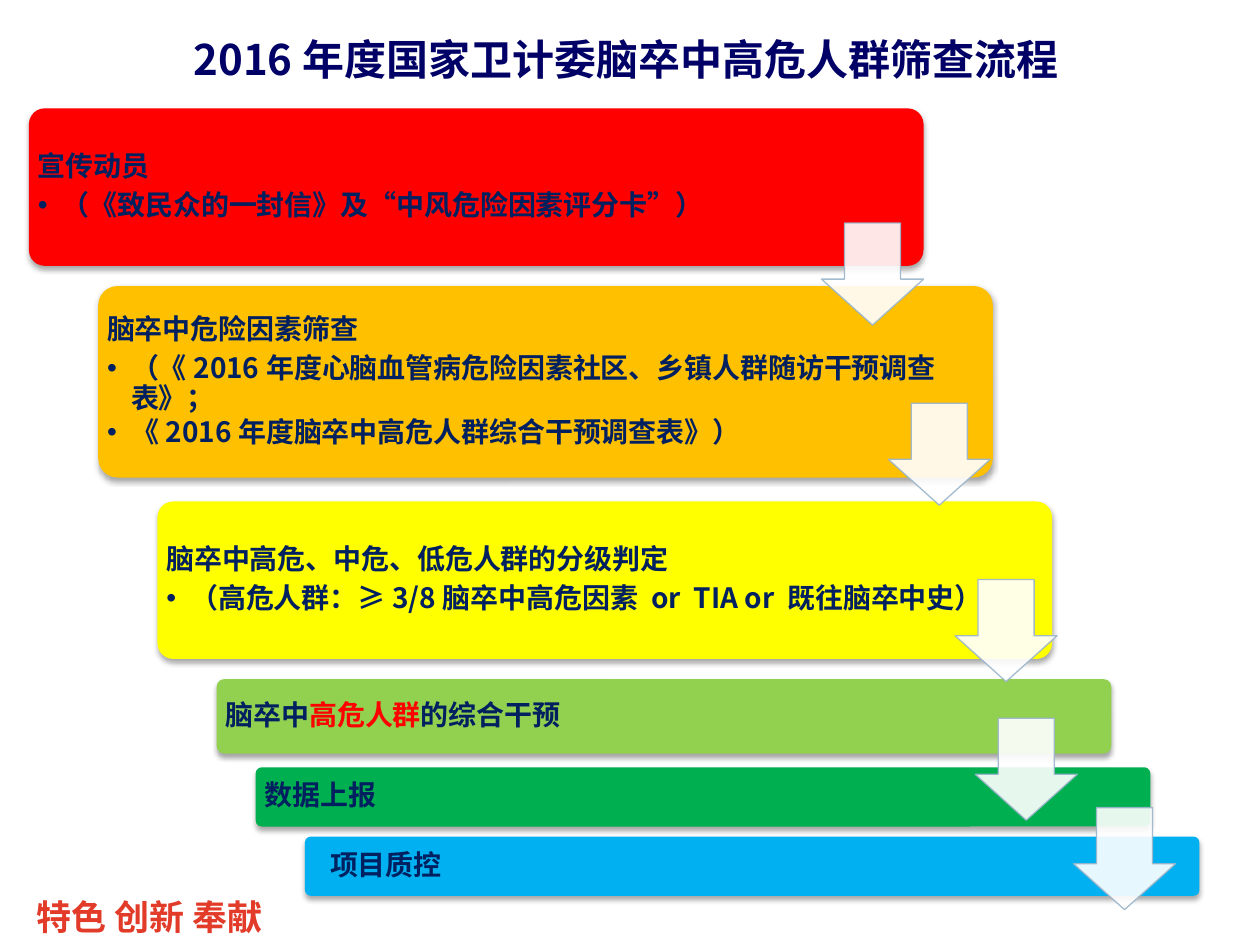
from dataclasses import dataclass

from lxml.etree import SubElement
from pptx import Presentation
from pptx.dml.color import RGBColor
from pptx.enum.shapes import MSO_SHAPE as Shape
from pptx.enum.text import MSO_ANCHOR as Anchor, PP_ALIGN as Align
from pptx.oxml.ns import qn
from pptx.util import Emu, Inches, Pt


@dataclass(frozen=True)
class Theme:
    font: str = "Noto Sans CJK SC"
    title: str = "000066"
    body: str = "002060"
    alert: str = "FF0000"
    motto: str = "E33B29"
    arrow: str = "FFFFFF"
    arrow_line: str = "9AB4CA"
    shadow: str = "000000"
    title_size: int = 24
    body_size: int = 16
    motto_size: int = 20


THEME = Theme()
STAGE_WIDTH = 7.1
ARROW_SIZE = 0.81
INSET = 0.07
CORNER = 0.1
HANG = 0.19

STAGES = [
    dict(box=(0.23, 0.86, 1.25), color="FF0000", arrow=(6.52, 1.77),
         heading=["宣传动员"],
         details=["（《致民众的一封信》及“中风危险因素评分卡”）"]),
    dict(box=(0.78, 2.27, 1.52), color="FFC000", arrow=(7.05, 3.2),
         heading=["脑卒中危险因素筛查"],
         details=["（《2016年度心脑血管病危险因素社区、乡镇人群随访干预调查表》；",
                  "《2016年度脑卒中高危人群综合干预调查表》）"]),
    dict(box=(1.25, 3.98, 1.25), color="FFFF00", arrow=(7.58, 4.6),
         heading=["脑卒中高危、中危、低危人群的分级判定"],
         details=["（高危人群：≥3/8脑卒中高危因素 or  TIA or 既往脑卒中史）"]),
    dict(box=(1.72, 5.39, 0.59), color="92D050", arrow=(7.74, 5.7),
         heading=["脑卒中", ("高危人群", THEME.alert), "的综合干预"]),
    dict(box=(2.03, 6.09, 0.47), color="00B050", arrow=(8.52, 6.41),
         heading=["数据上报"]),
    dict(box=(2.42, 6.64, 0.47), color="00B0F0", heading=["项目质控"],
         indent=0.13),
]


def apply(target, values):
    for name, value in values.items():
        setattr(target, name, value)


def rgb(value):
    return RGBColor.from_string(value)


def add_run(paragraph, text, size, color):
    run = paragraph.add_run()
    run.text = text
    apply(run.font, dict(name=THEME.font, size=Pt(size), bold=True))
    run.font.color.rgb = rgb(color)
    SubElement(run.font._element, qn("a:ea"), typeface=THEME.font)


def add_bullet(paragraph):
    properties = paragraph._p.get_or_add_pPr()
    hang = Inches(HANG)
    properties.set("marL", str(hang))
    properties.set("indent", str(-hang))
    SubElement(properties, qn("a:buFont"), typeface="Arial")
    SubElement(properties, qn("a:buChar"), char="•")


def add_shadow(shape):
    effects = shape._element.spPr.find(qn("a:effectLst"))
    outer = SubElement(effects, qn("a:outerShdw"), blurRad=str(Pt(3.1)),
                       dist=str(Pt(1.8)), dir="5400000", rotWithShape="0")
    color = SubElement(outer, qn("a:srgbClr"), val=THEME.shadow)
    SubElement(color, qn("a:alpha"), val="35000")


def set_opacity(fill_owner, percent):
    for color in fill_owner.iter(qn("a:srgbClr")):
        SubElement(color, qn("a:alpha"), val=str(percent * 1000))


def add_title(slide, box, text):
    title = slide.shapes.title
    apply(title, dict(zip(("left", "top", "width", "height"), box)))
    apply(title.text_frame, dict(vertical_anchor=Anchor.MIDDLE, word_wrap=True))
    heading = title.text_frame.paragraphs[0]
    heading.alignment = Align.CENTER
    add_run(heading, text, THEME.title_size, THEME.title)


def add_stage(slide, box, color, heading, details=(), indent=0):
    left, top, width, height = box
    bar = slide.shapes.add_shape(Shape.ROUNDED_RECTANGLE, left, top, width, height)
    bar.adjustments[0] = CORNER
    bar.fill.solid()
    bar.fill.fore_color.rgb = rgb(color)
    bar.line.fill.background()
    bar.shadow.inherit = False
    add_shadow(bar)

    corner_inset = 0.29 * CORNER * height
    margin = Emu(int(Inches(INSET) - corner_inset))
    frame = bar.text_frame
    apply(frame, dict(margin_left=margin + Inches(indent), margin_right=margin,
                      margin_top=margin, margin_bottom=margin,
                      word_wrap=True, vertical_anchor=Anchor.MIDDLE))
    lead = frame.paragraphs[0]
    apply(lead, dict(alignment=Align.LEFT, line_spacing=0.9, space_after=Pt(5)))
    for part in heading:
        text, tint = (part, THEME.body) if isinstance(part, str) else part
        add_run(lead, text, THEME.body_size, tint)
    for detail in details:
        item = frame.add_paragraph()
        add_bullet(item)
        apply(item, dict(alignment=Align.LEFT, line_spacing=0.9, space_after=Pt(2)))
        add_run(item, detail, THEME.body_size, THEME.body)


def add_step_arrow(slide, box):
    arrow = slide.shapes.add_shape(Shape.DOWN_ARROW, *box)
    arrow.adjustments[0] = 0.55
    arrow.adjustments[1] = 0.45
    arrow.fill.solid()
    arrow.fill.fore_color.rgb = rgb(THEME.arrow)
    arrow.line.color.rgb = rgb(THEME.arrow_line)
    arrow.line.width = Pt(0.75)
    arrow.shadow.inherit = False
    set_opacity(arrow._element.spPr, 90)


def add_motto(slide, box, text):
    motto = slide.shapes.add_textbox(*box)
    apply(motto.text_frame, dict(word_wrap=True, margin_left=Inches(0.29)))
    add_run(motto.text_frame.paragraphs[0], text, THEME.motto_size, THEME.motto)


def add_flow(slide, stages):
    for stage in stages:
        left, top, height = stage["box"]
        box = [Inches(v) for v in (left, top, STAGE_WIDTH, height)]
        add_stage(slide, box, stage["color"], stage["heading"],
                  stage.get("details", ()), stage.get("indent", 0))
    for stage in stages:
        if "arrow" in stage:
            add_step_arrow(slide, [Inches(v) for v in
                                   (*stage["arrow"], ARROW_SIZE, ARROW_SIZE)])


def main():
    deck = Presentation()
    apply(deck, dict(slide_width=Inches(10), slide_height=Inches(7.5)))
    slide = deck.slides.add_slide(deck.slide_layouts[5])
    add_motto(slide, [Inches(v) for v in (0, 7.06, 4.22, 0.44)], "特色 创新 奉献")
    add_title(slide, [Inches(v) for v in (0.47, -0.16, 9, 1.25)],
              "2016年度国家卫计委脑卒中高危人群筛查流程")
    add_flow(slide, STAGES)
    deck.save("out.pptx")


if __name__ == "__main__":
    main()
